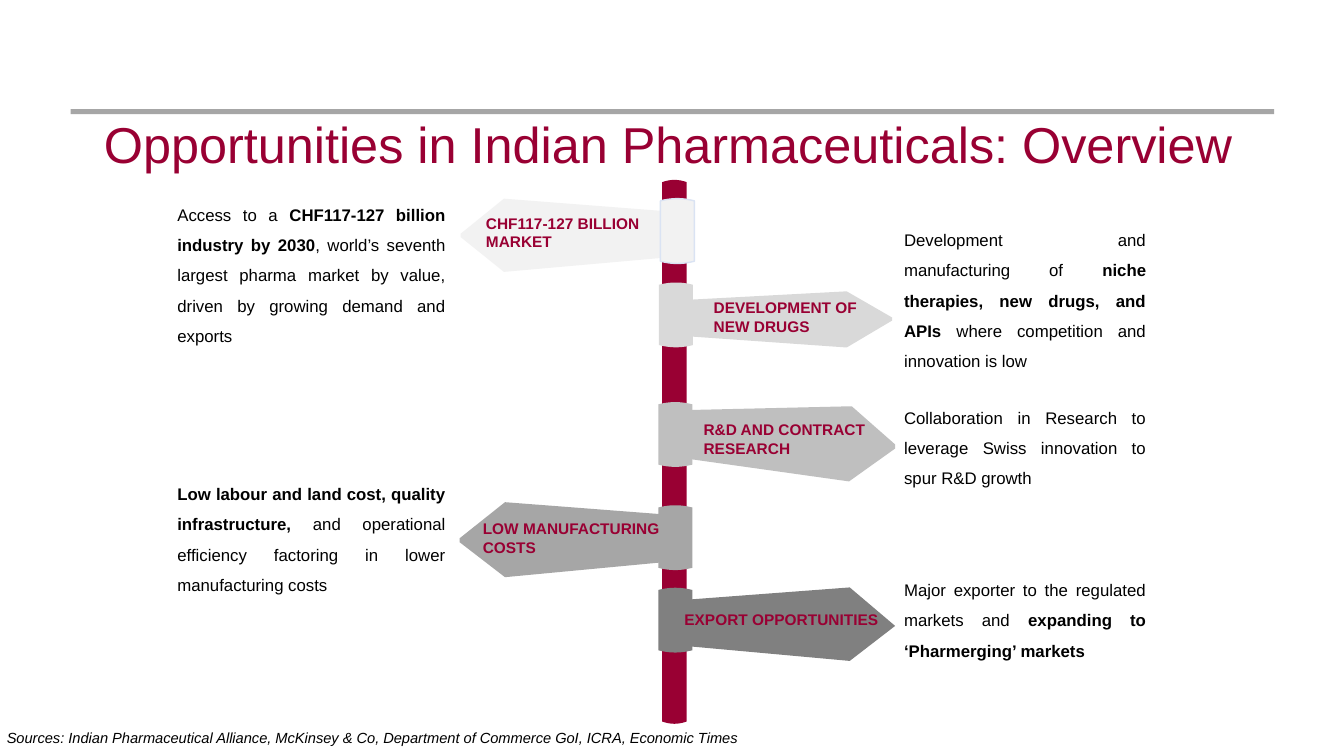
from pptx import Presentation
from pptx.dml.color import RGBColor
from pptx.enum.shapes import MSO_SHAPE
from pptx.enum.text import MSO_ANCHOR, PP_ALIGN
from pptx.util import Pt

LEFT, CENTER, JUSTIFY = PP_ALIGN.LEFT, PP_ALIGN.CENTER, PP_ALIGN.JUSTIFY
TOP, MIDDLE = MSO_ANCHOR.TOP, MSO_ANCHOR.MIDDLE
RECTANGLE = MSO_SHAPE.RECTANGLE

CRIMSON = RGBColor(0x99, 0x00, 0x33)
BLACK = RGBColor(0x00, 0x00, 0x00)
GREY_1 = RGBColor(0xF2, 0xF2, 0xF2)
GREY_2 = RGBColor(0xD9, 0xD9, 0xD9)
GREY_3 = RGBColor(0xBF, 0xBF, 0xBF)
GREY_4 = RGBColor(0xA6, 0xA6, 0xA6)
GREY_5 = RGBColor(0x80, 0x80, 0x80)
PALE_BLUE = RGBColor(0xDA, 0xE3, 0xF3)

FONT = "Arial"
SLEEVE_WIDTH, SLEEVE_HEIGHT = 24.3, 46.3
CAP_STEPS = 12

# Fill, sleeve line, sleeve left and top, arrow outline, label box, label
SIGNS = [
    (GREY_1, PALE_BLUE, (471.7, 141.9),
     [(360, 141.9), (477.4, 151), (477.4, 183.8), (360, 194.2), (329, 169.3), (329, 167)],
     (344.2, 149.8, 128.9, 32.4), "CHF117-127 BILLION MARKET"),
    (GREY_2, None, (470.7, 201.8),
     [(604.8, 208.1), (485.3, 214.5), (485.3, 239.8), (604.8, 248.2), (637.2, 229), (637.2, 226.8)],
     (506.9, 210.2, 133.2, 32.4), "DEVELOPMENT OF NEW DRUGS"),
    (GREY_3, None, (470.2, 287.2),
     [(608.4, 290.2), (488.2, 293), (486, 327), (606.5, 343.9), (639.4, 320.4), (639.4, 317.5)],
     (499.7, 297.4, 130.3, 32.4), "R&D AND CONTRACT RESEARCH"),
    (GREY_4, None, (470.2, 360.9),
     [(360.7, 358.7), (480.2, 367.9), (480.2, 401), (360.7, 412.3), (328.3, 387.3), (328.3, 384.5)],
     (342, 367.9, 138.2, 32.4), "LOW MANUFACTURING COSTS"),
    (GREY_5, None, (470.2, 419.8),
     [(607, 419.6), (490.3, 428.4), (490.3, 461.5), (607, 472.1), (639.4, 447.1)],
     (486, 433.4, 145.4, 18.7), "EXPORT OPPORTUNITIES"),
]

# Box, then (text, bold) runs
DESCRIPTIONS = [
    ((126.7, 136.1, 198.7, 113.8),
     [("Access to a ", False), ("CHF117-127 billion industry by 2030", True),
      (", world’s seventh largest pharma market by value, driven by growing demand and exports", False)]),
    ((645.8, 164.9, 180, 92.2),
     [("Development and manufacturing of ", False), ("niche therapies, new drugs, and APIs ", True),
      ("where competition and innovation is low", False)]),
    ((645.8, 281.5, 180, 69.8),
     [("Collaboration in Research to leverage Swiss innovation to spur R&D growth", False)]),
    ((126.7, 335.5, 198.7, 92.2),
     [("Low labour and land cost, quality infrastructure, ", True),
      ("and operational efficiency factoring in lower manufacturing costs", False)]),
    ((645.8, 404.6, 180, 69.8),
     [("Major exporter to the regulated markets and ", False),
      ("expanding to ‘Pharmerging’ markets", True)]),
]


def add_text(slide, box, runs, size, color=BLACK, italic=False, align=LEFT,
             anchor=MIDDLE, spacing=None, insets=(7.2, 3.6, 7.2, 3.6), wrap=True):
    """Add a text box holding one paragraph of (text, bold) runs."""
    frame = slide.shapes.add_textbox(*map(Pt, box)).text_frame
    frame.word_wrap = wrap
    frame.vertical_anchor = anchor
    frame.margin_left, frame.margin_top, frame.margin_right, frame.margin_bottom = map(Pt, insets)
    paragraph = frame.paragraphs[0]
    paragraph.alignment = align
    if spacing:
        paragraph.line_spacing = spacing
    for text, bold in runs:
        run = paragraph.add_run()
        run.text = text
        run.font.name, run.font.size = FONT, Pt(size)
        run.font.bold, run.font.italic = bold, italic
        run.font.color.rgb = color


def paint(shape, fill, line=None):
    shape.shadow.inherit = False
    shape.fill.solid()
    shape.fill.fore_color.rgb = fill
    if line is None:
        shape.line.fill.background()
    else:
        shape.line.color.rgb = line
        shape.line.width = Pt(1)


def add_outline(slide, points, fill, line=None):
    """Add a closed freeform through the points."""
    corners = [(Pt(x), Pt(y)) for x, y in points]
    builder = slide.shapes.build_freeform(*corners[0])
    builder.add_line_segments(corners[1:], close=True)
    paint(builder.convert_to_shape(), fill, line)


def add_cylinder(slide, left, top, width, height, fill, line=None):
    """Add an upright band whose two ends bulge outwards."""
    cap = 1.6
    steps = [i / CAP_STEPS for i in range(CAP_STEPS + 1)]
    upper = [(left + width * t, top + cap * (2 * t - 1) ** 2) for t in steps]
    lower = [(x, 2 * top + height - y) for x, y in reversed(upper)]
    add_outline(slide, upper + lower, fill, line)


def add_sign(slide, fill, line, sleeve, arrow, label_box, label):
    add_outline(slide, arrow, fill)
    add_cylinder(slide, *sleeve, SLEEVE_WIDTH, SLEEVE_HEIGHT, fill, line)
    add_text(slide, label_box, [(label, True)], 11, color=CRIMSON, insets=(2.9,) * 4,
             wrap=" " in label and label != "EXPORT OPPORTUNITIES")


def main():
    presentation = Presentation()
    presentation.slide_width, presentation.slide_height = Pt(960), Pt(540)
    slide = presentation.slides.add_slide(presentation.slide_layouts[6])

    # Rule, title and sources
    rule = slide.shapes.add_shape(RECTANGLE, Pt(50.4), Pt(78), Pt(859.7), Pt(3.6))
    paint(rule, GREY_4)
    add_text(slide, (63.4, 82.8, 828, 44.6),
             [("Opportunities in Indian Pharmaceuticals: Overview", False)], 36,
             color=CRIMSON, align=CENTER, spacing=0.9)
    add_text(slide, (-2.2, 517, 894, 20.2),
             [("Sources: Indian Pharmaceutical Alliance, McKinsey & Co, "
               "Department of Commerce GoI, ICRA, Economic Times", False)],
             10.5, italic=True, anchor=TOP)

    # Signpost
    add_cylinder(slide, 473, 128.5, 17.5, 388.5, CRIMSON)
    for sign in SIGNS:
        add_sign(slide, *sign)

    # Descriptions beside the signs
    for box, runs in DESCRIPTIONS:
        add_text(slide, box, runs, 12, align=JUSTIFY, spacing=1.5, insets=(0, 3.6, 7.2, 3.6))

    presentation.save("out.pptx")


if __name__ == "__main__":
    main()
